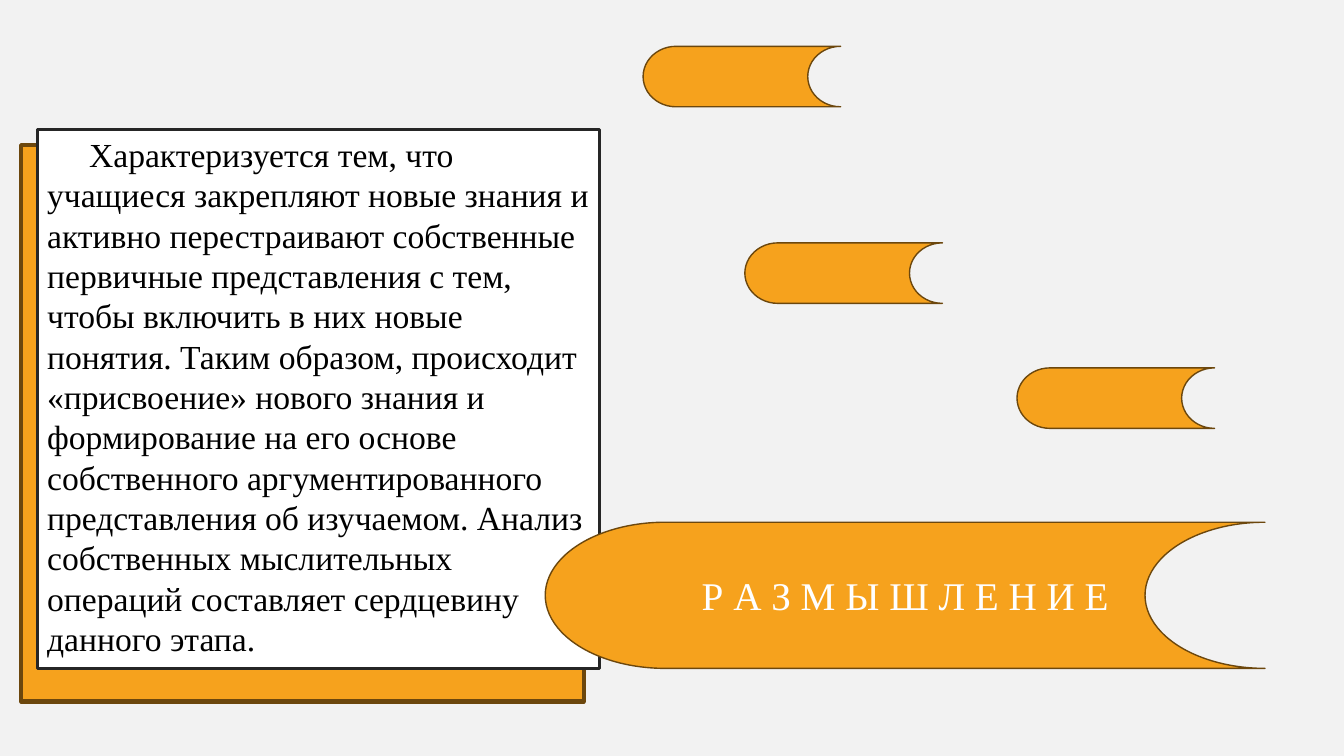
from pptx import Presentation
from pptx.dml.color import RGBColor
from pptx.enum.shapes import MSO_SHAPE
from pptx.enum.text import MSO_ANCHOR, PP_ALIGN
from pptx.util import Pt

RECTANGLE = MSO_SHAPE.RECTANGLE
STORAGE = MSO_SHAPE.FLOWCHART_STORED_DATA
TOP, MIDDLE = MSO_ANCHOR.TOP, MSO_ANCHOR.MIDDLE
LEFT, CENTER = PP_ALIGN.LEFT, PP_ALIGN.CENTER

ORANGE = RGBColor(0xF6, 0xA2, 0x1D)
BROWN = RGBColor(0x6C, 0x47, 0x0D)
CHARCOAL = RGBColor(0x26, 0x26, 0x26)
BLACK = RGBColor(0, 0, 0)
WHITE = RGBColor(0xFF, 0xFF, 0xFF)
PALE_GRAY = RGBColor(0xF2, 0xF2, 0xF2)

STAGE_TEXT = (
    "Характеризуется тем, что учащиеся закрепляют новые знания и активно "
    "перестраивают собственные первичные представления с тем, чтобы включить "
    "в них новые понятия. Таким образом, происходит «присвоение» нового знания "
    "и формирование на его основе собственного аргументированного представления "
    "об изучаемом. Анализ собственных мыслительных операций составляет "
    "сердцевину данного этапа."
)
STAGE_TITLE = "Р А З М Ы Ш Л Е Н И Е"
SMALL_TABS = [(459.4, 33.1), (532.1, 173.5), (726.5, 262.8)]


def write_text(shape, text, *, size, color, align=LEFT, anchor=TOP,
               first_indent=0, line_height=None):
    frame = shape.text_frame
    frame.word_wrap = True
    frame.vertical_anchor = anchor
    para = frame.paragraphs[0]
    para.alignment = align
    if first_indent:
        para._p.get_or_add_pPr().set("indent", str(Pt(first_indent)))
    if line_height:
        para.line_spacing = Pt(line_height)
    span = para.add_run()
    span.text = text
    span.font.name = "Times New Roman"
    span.font.size = Pt(size)
    span.font.color.rgb = color


class SlidePainter:
    def __init__(self, page, background):
        self.page = page
        page.background.fill.solid()
        page.background.fill.fore_color.rgb = background

    def shape(self, kind, left, top, width, height, *, fill, line, weight):
        shape = self.page.shapes.add_shape(
            kind, Pt(left), Pt(top), Pt(width), Pt(height))
        shape.shadow.inherit = False
        shape.fill.solid()
        shape.fill.fore_color.rgb = fill
        shape.line.color.rgb = line
        shape.line.width = Pt(weight)
        return shape

    def panel(self, left, top, width, height, **style):
        return self.shape(RECTANGLE, left, top, width, height, **style)

    def tab(self, left, top, width, height):
        return self.shape(STORAGE, left, top, width, height,
                          fill=ORANGE, line=BROWN, weight=1)


def main():
    deck = Presentation()
    deck.slide_width, deck.slide_height = Pt(960), Pt(540)
    painter = SlidePainter(deck.slides.add_slide(deck.slide_layouts[6]), PALE_GRAY)

    painter.panel(15.1, 103.7, 401.8, 397.4, fill=ORANGE, line=BROWN, weight=3)
    card = painter.panel(26.6, 92.2, 401.8, 385.2,
                         fill=WHITE, line=CHARCOAL, weight=2.25)
    write_text(card, STAGE_TEXT, size=24, color=BLACK,
               first_indent=30, line_height=28.8)

    title = painter.tab(389.5, 373, 514.1, 104.4)
    write_text(title, STAGE_TITLE, size=28, color=WHITE,
               align=CENTER, anchor=MIDDLE)

    for left, top in SMALL_TABS:
        painter.tab(left, top, 141.1, 43.2)

    deck.save("out.pptx")


if __name__ == "__main__":
    main()
